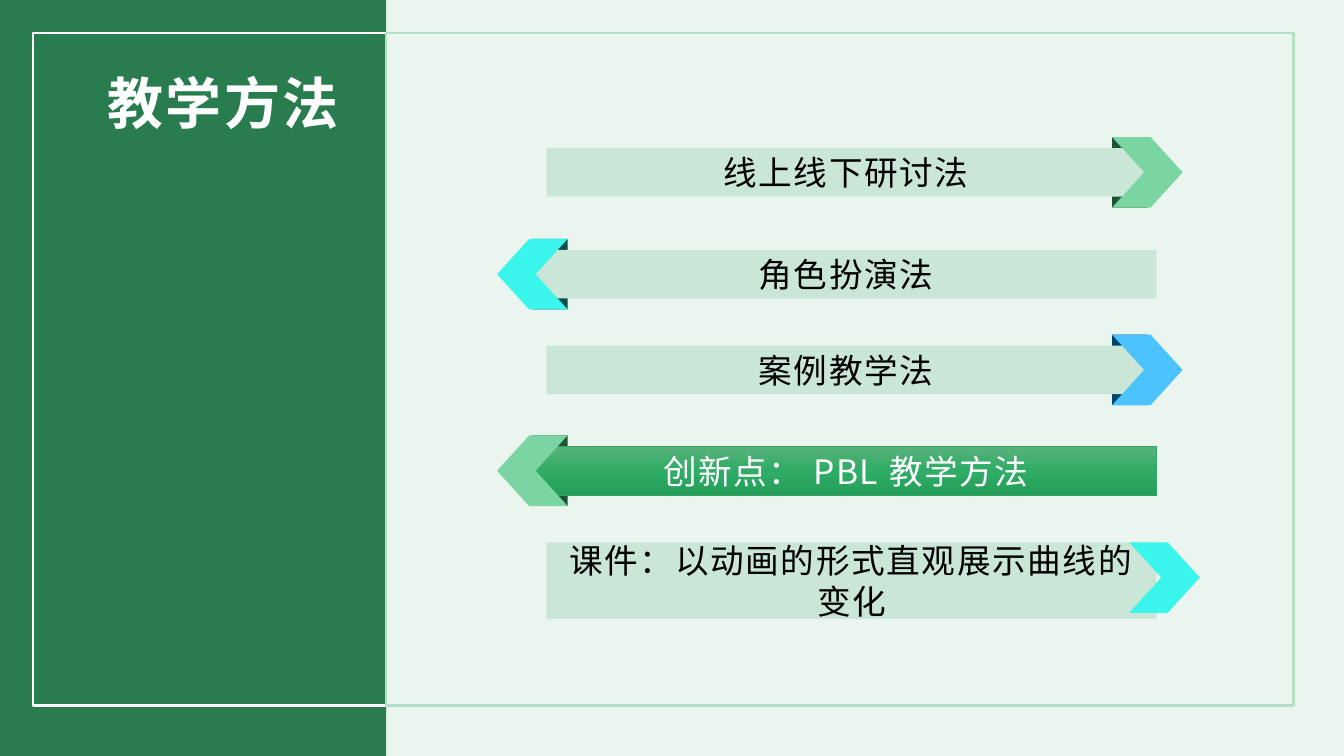
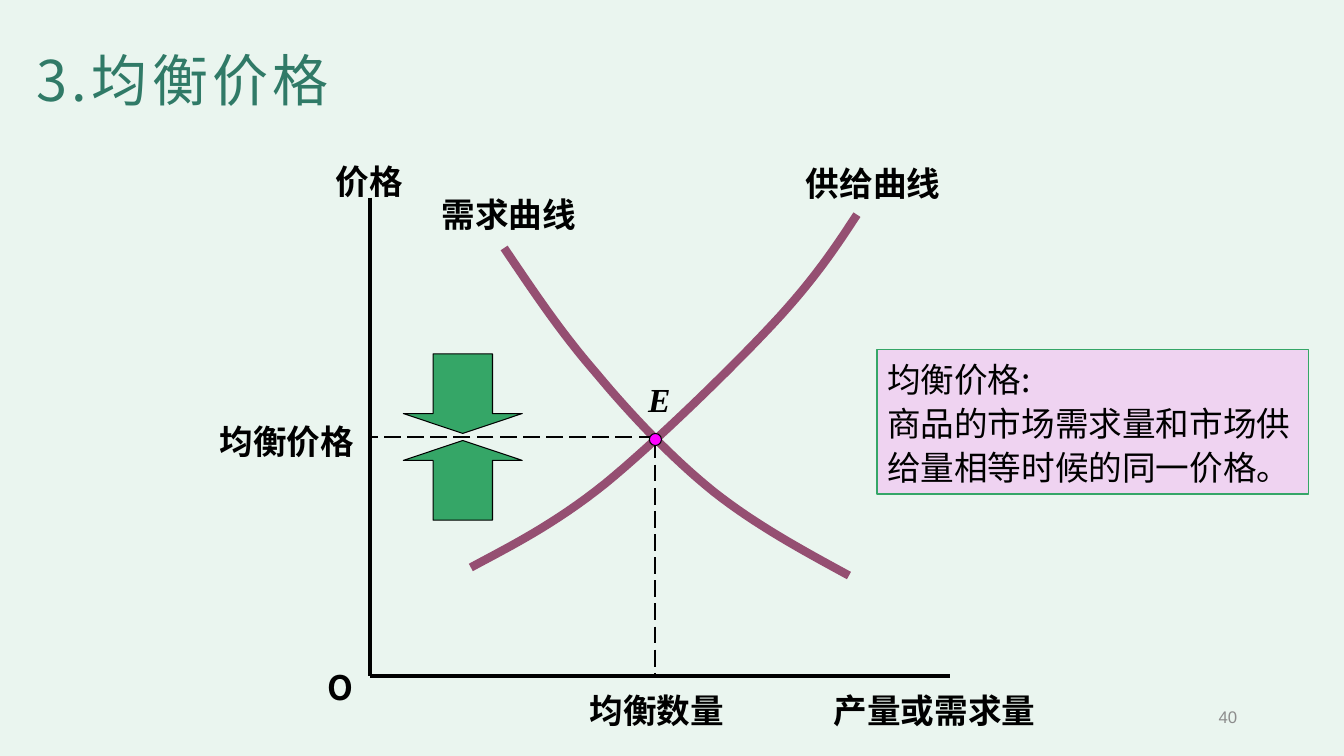
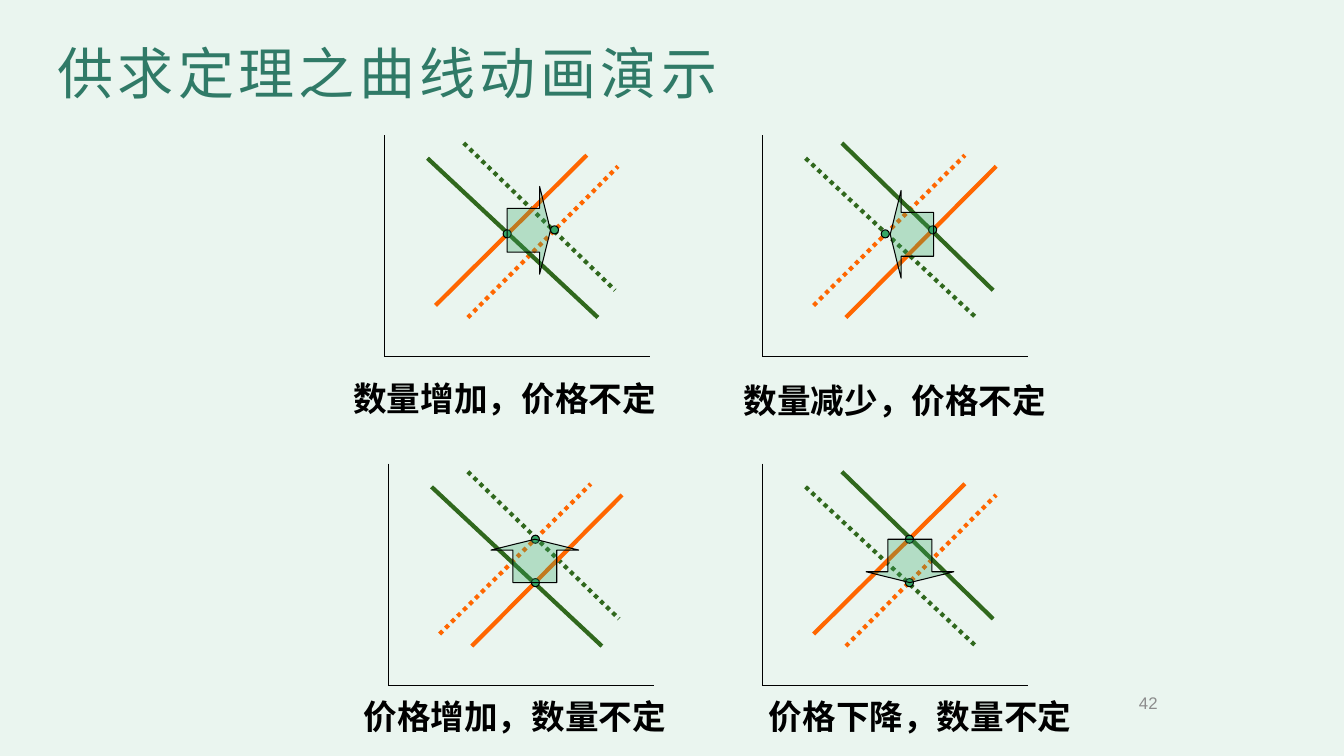
from copy import deepcopy

from lxml.etree import SubElement
from pptx import Presentation
from pptx.dml.color import RGBColor
from pptx.enum.dml import MSO_LINE as Dash
from pptx.enum.shapes import MSO_CONNECTOR as Link, MSO_SHAPE as Form
from pptx.enum.text import MSO_ANCHOR as Anchor, PP_ALIGN as Align
from pptx.oxml.ns import qn
from pptx.util import Inches, Pt

HUES = {
    "page": "EAF5EF", "panel": "287C4D", "frame": "B4E0C7", "bar": "CAE6D6",
    "white": "FFFFFF", "black": "000000", "title": "307A67", "grey": "8C8C8C",
    "green": "35A667", "mint": "7BD5A3", "aqua": "3AF5EC", "sky": "4CC3FF",
    "pine": "1B5334", "teal": "044E4B", "navy": "00466A",
    "plum": "954F72", "pink": "EFD3F1", "dot": "FF00FF",
    "leaf": "30681D", "orange": "FF6600",
    "top": "57B27A", "mid": "2FAC66", "base": "259E5A",
}
CJK = "Noto Sans CJK SC"
TIGHT = (0.07, 0.03)


def hue(name):
    return RGBColor.from_string(HUES[name])


class Deck:
    def __init__(self):
        self.show = Presentation()
        self.show.slide_width = Inches(13.33)
        self.show.slide_height = Inches(7.5)
        self.slide = None

    def page(self):
        self.slide = self.show.slides.add_slide(self.show.slide_layouts[6])
        back = self.slide.background.fill
        back.solid()
        back.fore_color.rgb = hue("page")

    def stroke(self, line, color, width):
        if color:
            line.color.rgb = hue(color)
            line.width = Pt(width)
        else:
            line.fill.background()

    def shape(self, form, box, fill=None, line=None, width=0.75, adj=(), alpha=None):
        item = self.slide.shapes.add_shape(form, *map(Inches, box))
        item.shadow.inherit = False
        for spot, value in enumerate(adj):
            item.adjustments[spot] = value
        if fill:
            item.fill.solid()
            item.fill.fore_color.rgb = hue(fill)
        else:
            item.fill.background()
        if alpha:
            tint = item._element.spPr.find(".//" + qn("a:srgbClr"))
            SubElement(tint, qn("a:alpha")).set("val", str(alpha * 1000))
        self.stroke(item.line, line, width)
        return item

    def blend(self, item, *names):
        fill = item.fill
        fill.gradient()
        fill.gradient_angle = 270
        first = item._element.spPr.find(".//" + qn("a:gs"))
        first.addnext(deepcopy(first))
        for spot, (stop, name) in enumerate(zip(fill.gradient_stops, names)):
            stop.position = spot / 2
            stop.color.rgb = hue(name)

    def line(self, start, end, color="black", width=0.75, dash=None):
        item = self.slide.shapes.add_connector(Link.STRAIGHT, *map(Inches, start + end))
        SubElement(item._element.spPr, qn("a:effectLst"))
        self.stroke(item.line, color, width)
        if dash:
            item.line.dash_style = dash

    def curve(self, start, *arcs):
        dots = [start]
        for arc in arcs:
            knots = (dots[-1], *arc)
            for step in range(1, 17):
                t = step / 16
                u = 1 - t
                dots.append(tuple(
                    u ** 3 * a + 3 * u * u * t * b + 3 * u * t * t * c + t ** 3 * d
                    for a, b, c, d in zip(*knots)))
        spots = [(Inches(x), Inches(y)) for x, y in dots]
        pen = self.slide.shapes.build_freeform(*spots[0])
        pen.add_line_segments(spots[1:], close=False)
        item = pen.convert_to_shape()
        item.shadow.inherit = False
        item.fill.background()
        self.stroke(item.line, "plum", 6)

    def label(self, item, text, size=24, color="black", bold=False, slant=False,
              font=CJK, space=0, align=Align.LEFT, anchor=Anchor.TOP,
              inset=(0.1, 0.05), wrap=True, after=None, lead=None):
        frame = item.text_frame
        frame.word_wrap = wrap
        frame.vertical_anchor = anchor
        frame.margin_left = frame.margin_right = Inches(inset[0])
        frame.margin_top = frame.margin_bottom = Inches(inset[1])
        frame.text = text
        for para in frame.paragraphs:
            para.alignment = align
            if after:
                para.space_after = Pt(after)
            if lead:
                para.line_spacing = lead
            face = para.font
            face.size = Pt(size)
            face.bold = bold
            face.italic = slant
            face.color.rgb = hue(color)
            face.name = font
            props = para._p.pPr.find(qn("a:defRPr"))
            SubElement(props, qn("a:ea")).set("typeface", font)
            if space:
                props.set("spc", str(round(space * 100)))

    def text(self, box, words, **style):
        self.label(self.slide.shapes.add_textbox(*map(Inches, box)), words, **style)

    def title(self, box, words, **style):
        self.text(box, words, **{"size": 40, "color": "title", "space": 3.2, **style})

    def number(self, left, top, words):
        self.text((left, top, 2.95, 0.35), words, size=12, color="grey", font="Arial",
                  align=Align.RIGHT, anchor=Anchor.MIDDLE)

    def bar(self, box, words, color="black", **look):
        item = self.shape(Form.RECTANGLE, box, "bar", **look)
        self.label(item, words, color=color, space=1.2, align=Align.CENTER,
                   anchor=Anchor.MIDDLE, after=8)
        return item

    def tip(self, left, top, fill):
        return self.shape(Form.CHEVRON, (left, top, 0.7, 0.7), fill, adj=(0.455,))

    def arrow(self, form, box, alpha=None):
        self.shape(form, box, "green", "black", adj=(0.5, 0.25), alpha=alpha)


def methods(deck):
    deck.page()
    deck.shape(Form.RECTANGLE, (0, 0, 3.83, 7.5), "panel")
    deck.shape(Form.RECTANGLE, (0.33, 0.33, 3.5, 6.67), line="white", width=1.5)
    deck.shape(Form.RECTANGLE, (3.83, 0.33, 9, 6.67), line="frame", width=1.5)
    deck.title((1, 0.65, 2.83, 1.5), "教学方法", color="white", bold=True,
               space=1.6, inset=TIGHT)
    rows = [
        (1.36, "线上线下研讨法", "mint", "pine"),
        (2.37, "角色扮演法", "aqua", "teal"),
        (3.32, "案例教学法", "sky", "navy"),
        (4.32, "创新点： PBL 教学方法", "mint", "pine"),
    ]
    for spot, (top, words, fill, fold) in enumerate(rows):
        left = spot % 2 == 1
        deck.shape(Form.RECTANGLE, (5.28 if left else 11.03, top, 0.35, 0.7), fold)
        start, width = (5.31, 6.16) if left else (5.42, 5.94)
        box = (start, top + 0.11, width, 0.48)
        if spot == 3:
            deck.blend(deck.bar(box, words, "white", line="green", width=0.5),
                       "top", "mid", "base")
        else:
            deck.bar(box, words)
        tip = deck.tip(4.93 if left else 11.03, top, fill)
        if left:
            tip.rotation = 180
    deck.bar((5.42, 5.38, 6.05, 0.76), "课件：以动画的形式直观展示曲线的变化")
    deck.tip(11.2, 5.38, "aqua")


def balance(deck):
    deck.page()
    deck.number(9.42, 6.94, "40")
    zero = (3.67, 6.71)
    deck.line((3.67, 1.96), zero, width=3)
    deck.line(zero, (9.42, 6.71), width=3)
    deck.curve((4.67, 5.63),
               ((5.08, 5.41), (5.5, 5.2), (6, 4.8)),
               ((6.5, 4.39), (7.25, 3.66), (7.67, 3.21)),
               ((8.08, 2.77), (8.29, 2.45), (8.5, 2.13)))
    deck.curve((5, 2.46),
               ((5.29, 2.89), (5.57, 3.31), (5.92, 3.71)),
               ((6.26, 4.12), (6.67, 4.55), (7.08, 4.88)),
               ((7.5, 5.21), (7.96, 5.46), (8.42, 5.71)))
    deck.line((6.5, 4.38), (6.5, 6.71), width=1.5, dash=Dash.LONG_DASH)
    deck.line((6.5, 4.34), (3.67, 4.34), width=1.5, dash=Dash.LONG_DASH)
    labels = [
        (3.23, 1.55, 1.1, "价格", {}),
        (8.17, 6.8, 2.72, "产量或需求量", {}),
        (2.08, 4.13, 1.75, "均衡价格", {}),
        (5.75, 6.8, 1.75, "均衡数量", {}),
        (6.33, 3.71, 0.42, "E", {"font": "Times New Roman", "slant": True, "wrap": False}),
        (3.15, 6.57, 0.37, "O", {"wrap": False}),
        (4.17, 1.87, 1.75, "需求曲线", {"align": Align.CENTER}),
        (7.82, 1.57, 1.68, "供给曲线", {"align": Align.CENTER}),
    ]
    for left, top, width, words, style in labels:
        deck.text((left, top, width, 0.5), words, bold=True, **style)
    deck.arrow(Form.UP_ARROW, (4, 4.37, 1.18, 0.79))
    deck.arrow(Form.DOWN_ARROW, (4, 3.51, 1.18, 0.79))
    deck.shape(Form.OVAL, (6.44, 4.3, 0.12, 0.12), "dot", "black")
    note = deck.shape(Form.RECTANGLE, (8.7, 3.47, 4.28, 1.43), "pink", "green", 1)
    deck.label(note, "均衡价格:\n商品的市场需求量和市场供给量相等时候的同一价格。", lead=1.1)
    deck.title((0.29, 0.18, 5, 0.97), "3.均衡价格", anchor=Anchor.BOTTOM, inset=TIGHT)


def shifts(deck):
    deck.page()
    deck.number(8.63, 6.8, "42")
    lines = {
        "low": ((0.43, 0.23), (2.12, 1.81), "leaf"),
        "high": ((0.79, 0.08), (2.29, 1.54), "leaf"),
        "left": ((0.51, 1.69), (2.01, 0.2), "orange"),
        "right": ((0.83, 1.81), (2.32, 0.31), "orange"),
    }
    dots = {
        ("low", "left"): (1.18, 0.94), ("high", "right"): (1.65, 0.9),
        ("low", "right"): (1.42, 1.14), ("high", "left"): (1.42, 0.71),
    }
    plots = [
        (3.81, 1.34, ("low", "left"), Form.RIGHT_ARROW, (1.22, 0.51, 0.43, 0.87),
         "数量增加，价格不定", (-0.31, 2.41)),
        (7.56, 1.34, ("high", "right"), Form.LEFT_ARROW, (1.27, 0.55, 0.43, 0.87),
         "数量减少，价格不定", (-0.19, 2.43)),
        (3.85, 4.6, ("low", "right"), Form.UP_ARROW, (1.02, 0.75, 0.87, 0.43),
         "价格增加，数量不定", (-0.25, 2.3)),
        (7.56, 4.6, ("high", "left"), Form.DOWN_ARROW, (1.03, 0.75, 0.87, 0.43),
         "价格下降，数量不定", (0.06, 2.3)),
    ]
    for x, y, solid, form, (dx, dy, wide, tall), words, (tx, ty) in plots:
        def at(spot):
            return x + spot[0], y + spot[1]

        others = tuple(name for name in lines if name not in solid)
        for names, dash in ((others, Dash.ROUND_DOT), (solid, None)):
            for name in names:
                start, end, color = lines[name]
                deck.line(at(start), at(end), color, 3, dash)
        deck.line(at((0, 0)), at((0, 2.2)))
        deck.line(at((0, 2.2)), at((2.64, 2.2)))
        for pair in (solid, others):
            deck.shape(Form.OVAL, (*at(dots[pair]), 0.08, 0.08), "green", "black")
        deck.arrow(form, (x + dx, y + dy, wide, tall), alpha=30)
        deck.text((x + tx, y + ty, 3.01, 0.4), words, bold=True, align=Align.CENTER,
                  inset=(0, 0), wrap=False)
    deck.title((0.47, 0.09, 8.5, 1.25), "供求定理之曲线动画演示", anchor=Anchor.MIDDLE)


def main():
    deck = Deck()
    methods(deck)
    balance(deck)
    shifts(deck)
    deck.show.save("out.pptx")


if __name__ == "__main__":
    main()
